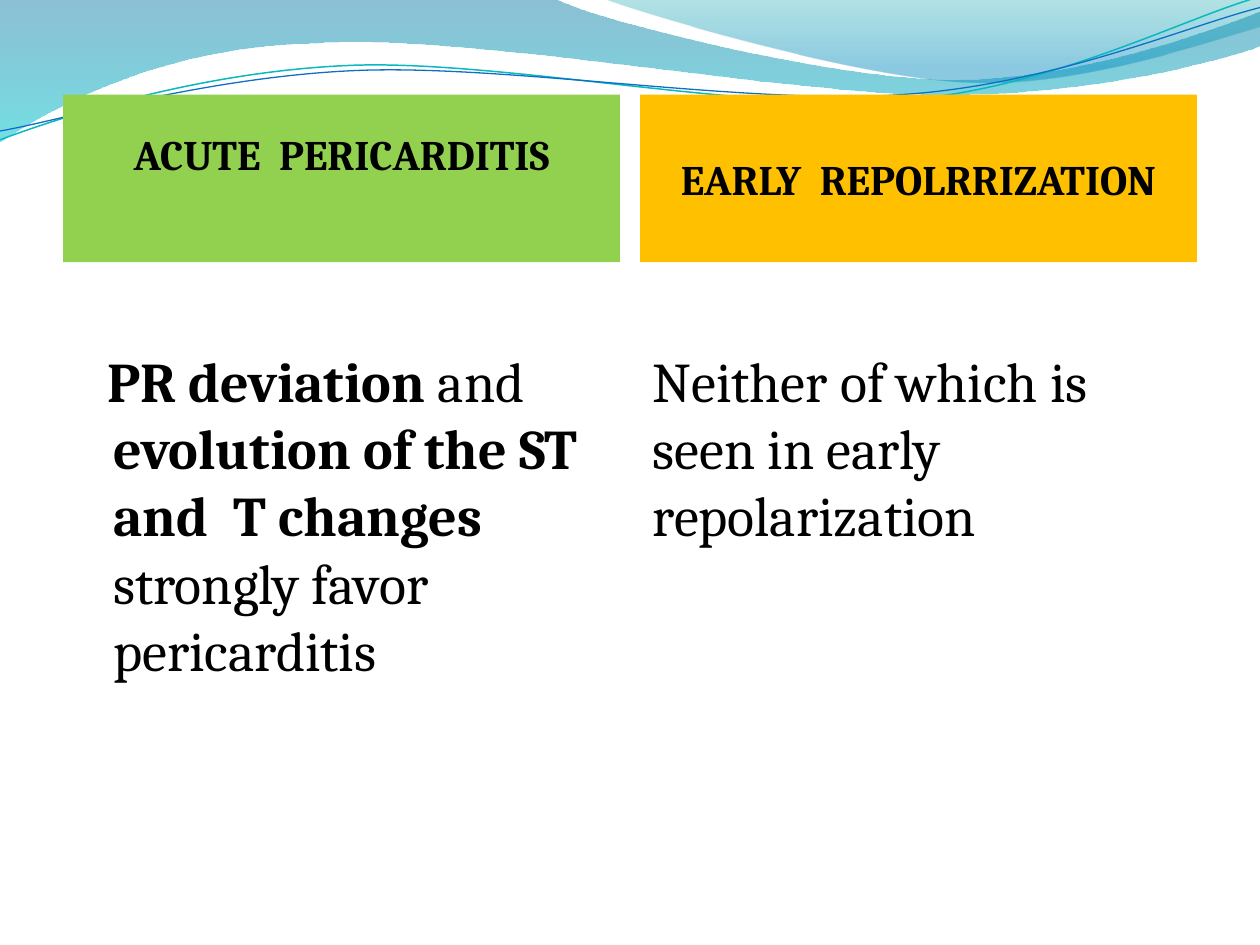
import pptx
import pptx.util
import pptx.dml.color
import pptx.enum.text
import pptx.oxml
import pptx.oxml.ns

Inches, Pt = pptx.util.Inches, pptx.util.Pt
RGB = pptx.dml.color.RGBColor
qn = pptx.oxml.ns.qn
ALIGN, ANCHOR = pptx.enum.text.PP_ALIGN, pptx.enum.text.MSO_ANCHOR

BLACK = RGB(0, 0, 0)
GREEN = RGB(0x92, 0xD0, 0x50)
AMBER = RGB(0xFF, 0xC0, 0x00)
DEEP = RGB(0x00, 0x74, 0xA1)
AQUA = RGB(0x00, 0xC6, 0xCF)
TEAL = RGB(0x00, 0xA1, 0xA9)
SKY = RGB(0x00, 0x8B, 0xBF)
CYAN = RGB(0x0A, 0xB8, 0xBF)
BLUE = RGB(0x0F, 0x6F, 0xC6)


def trace(shapes, start, legs, close):
    """Draw an outline in inches; a leg is an end point or a Bezier's three points."""
    pen = shapes.build_freeform(Inches(start[0]), Inches(start[1]), scale=1.0)
    pen.add_line_segments([(Inches(leg[-2]), Inches(leg[-1])) for leg in legs], close=close)
    shape = pen.convert_to_shape()
    shape.shadow.inherit = False
    lines = list(shape._element.spPr.iter(qn("a:lnTo")))
    for line, leg in zip(lines, legs):
        if len(leg) == 2:
            continue
        curve = line.makeelement(qn("a:cubicBezTo"), {})
        for x, y in zip(leg[::2], leg[1::2]):
            spot = {"x": str(Inches(x) - shape.left), "y": str(Inches(y) - shape.top)}
            curve.append(line.makeelement(qn("a:pt"), spot))
        line.getparent().replace(line, curve)
    return shape


def write(box, runs, size=32, align=ALIGN.LEFT, left=0, first=0):
    """Fill the first paragraph of a box with (text, bold) runs."""
    para = box.text_frame.paragraphs[0]
    para.alignment = align
    props = para._p.get_or_add_pPr()
    props.set("marL", str(Inches(left)))
    props.set("indent", str(Inches(first)))
    props.append(props.makeelement(qn("a:buNone"), {}))
    for text, bold in runs:
        run = para.add_run()
        run.text = text
        run.font.name = "Cambria"
        run.font.size = Pt(size)
        run.font.bold = bold
        run.font.color.rgb = BLACK


deck = pptx.Presentation()
deck.slide_width, deck.slide_height = Inches(10), Inches(7.5)
slide = deck.slides.add_slide(deck.slide_layouts[4])
shapes = slide.shapes
title = shapes.title._element
title.getparent().remove(title)

# Waves along the top: start, legs, gradient stops (position, colour, opacity)
waves = [
    ((0, 0), [(4.4, -0.01), (4.76, 0.17, 6.64, 0.63, 7.58, 0.63),
              (8.53, 0.63, 9.58, 0.26, 10, 0.09), (10.01, 0.36),
              (9.83, 0.44, 8.7, 0.76, 7.46, 0.75),
              (6.22, 0.75, 3.82, 0.28, 2.57, 0.34),
              (1.29, 0.36, 0.46, 0.83, -0.01, 1.13)],
     [(0, DEEP, 45), (1, AQUA, 55)]),
    ((4.79, -0.01), [(5.09, 0.11, 6.82, 0.62, 7.69, 0.65),
                     (8.56, 0.69, 9.61, 0.32, 10, 0.21), (10, 0)],
     [(0, TEAL, 30), (0.8, SKY, 45)]),
]
for start, legs, stops in waves:
    wave = trace(shapes, start, legs, True)
    wave.line.fill.background()
    wave.fill.gradient()
    wave.fill.gradient_angle = 270
    for stop, (place, color, _) in zip(wave.fill.gradient_stops, stops):
        stop.position = place
        stop.color.rgb = color
    tints = list(wave._element.spPr.iter(qn("a:srgbClr")))
    for tint, (_, _, alpha) in zip(tints, stops):
        tint.append(tint.makeelement(qn("a:alpha"), {"val": str(alpha * 1000)}))

strands = [
    ((0, 1.11), [(0.48, 0.93, 1.58, 0.57, 2.77, 0.52),
                 (3.95, 0.47, 5.93, 0.89, 7.13, 0.8),
                 (8.33, 0.71, 9.38, 0.15, 9.98, -0.02)], CYAN, 0.85),
    ((0, 1.04), [(0.47, 0.96, 1.64, 0.61, 2.83, 0.56),
                 (4.03, 0.51, 5.97, 0.84, 7.17, 0.75),
                 (8.36, 0.67, 9.41, 0.21, 10, 0.06)], BLUE, 0.75),
]
for start, legs, color, width in strands:
    strand = trace(shapes, start, legs, False)
    strand.fill.background()
    strand.line.color.rgb = color
    strand.line.width = Pt(width)

# Two columns, each with a coloured heading and a body
columns = [
    (0.5, GREEN, "ACUTE  PERICARDITIS", 0.39,
     [("PR deviation ", True), ("and ", False),
      ("evolution of the ST and  T changes ", True),
      ("strongly favor pericarditis", False)], 0.3, -0.05),
    (5.08, AMBER, "EARLY  REPOLRRIZATION", 0,
     [("Neither of which is seen in early repolarization", False)], 0, 0),
]
holders = {p.placeholder_format.idx: p for p in slide.placeholders}
for col, (x, color, name, foot, runs, left, first) in enumerate(columns):
    head, body = holders[2 * col + 1], holders[2 * col + 2]
    for box, y, high in ((head, 0.75, 1.33), (body, 2.75, 4.21)):
        box.left, box.top = Inches(x), Inches(y)
        box.width, box.height = Inches(4.42), Inches(high)
        frame = box.text_frame
        frame.word_wrap = True
        frame.auto_size = pptx.enum.text.MSO_AUTO_SIZE.NONE
        frame.margin_top = 0
        shapes._spTree.append(box._element)
    head.fill.solid()
    head.fill.fore_color.rgb = color
    frame = head.text_frame
    frame.vertical_anchor = ANCHOR.MIDDLE
    frame.margin_left = frame.margin_right = Inches(0.05)
    frame.margin_bottom = Inches(foot)
    write(head, [(name, True)], size=24, align=ALIGN.CENTER)
    body.text_frame.vertical_anchor = ANCHOR.TOP
    write(body, runs, left=left, first=first)

deck.save("out.pptx")
